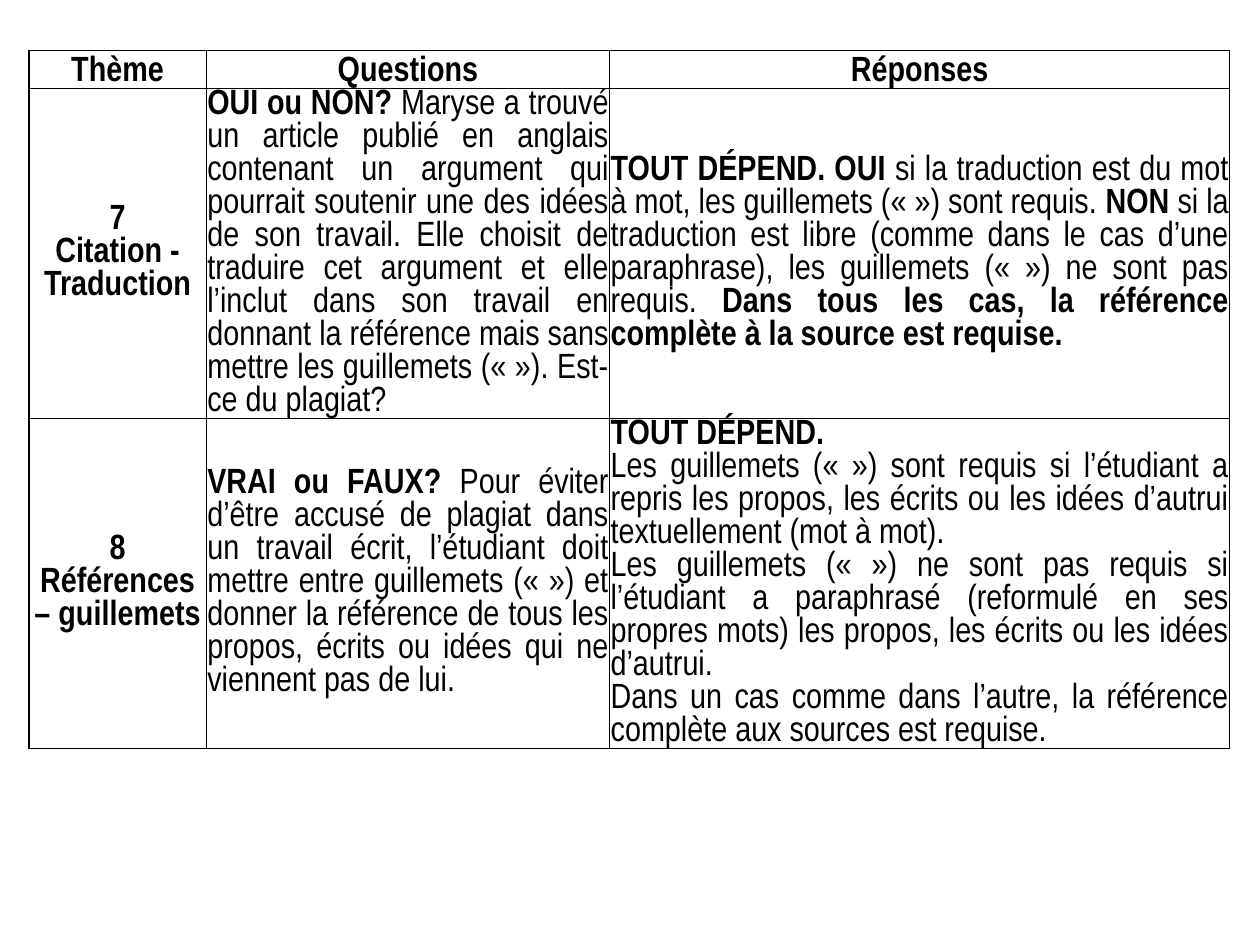
"""Build a slide with a question-and-answer table about quoting sources."""
from dataclasses import dataclass

from lxml.etree import SubElement
from pptx import Presentation
from pptx.dml.color import RGBColor
from pptx.enum.text import MSO_ANCHOR, PP_ALIGN
from pptx.oxml.ns import qn
from pptx.util import Cm, Pt


@dataclass(frozen=True)
class Theme:
    font: str = "Arial Narrow"
    size: Pt = Pt(20)
    ink: str = "000000"
    border: Pt = Pt(1)
    inset: Cm = Cm(0.02)
    head_spacing: float = 1.15


@dataclass(frozen=True)
class Run:
    text: str
    bold: bool = False


@dataclass(frozen=True)
class Entry:
    theme: list[str]
    question: list[list[Run]]
    answer: list[list[Run]]


THEME = Theme()
HEADINGS = ["Thème", "Questions", "Réponses"]
COL_WIDTHS = [Cm(3.58), Cm(8.13), Cm(12.5)]
ROW_HEIGHTS = [Cm(0.75), Cm(6.6), Cm(6.6)]
ENTRIES = [
    Entry(
        ["7", "Citation - Traduction"],
        [[
            Run("OUI ou NON? ", True),
            Run("Maryse a trouvé un article publié en anglais contenant un argument "
                "qui pourrait soutenir une des idées de son travail. Elle choisit de "
                "traduire cet argument et elle l’inclut dans son travail en donnant la "
                "référence mais sans mettre les guillemets (« »). Est-ce du plagiat?"),
        ]],
        [[
            Run("TOUT DÉPEND. OUI ", True),
            Run("si la traduction est du mot à mot, les guillemets (« ») sont requis. "),
            Run("NON ", True),
            Run("si la traduction est libre (comme dans le cas d’une paraphrase), "
                "les guillemets (« ») ne sont pas requis. "),
            Run("Dans tous les cas, la référence complète à la source est requise.", True),
        ]],
    ),
    Entry(
        ["8", "Références – guillemets"],
        [[
            Run("VRAI ou FAUX? ", True),
            Run("Pour éviter d’être accusé de plagiat dans un travail écrit, l’étudiant "
                "doit mettre entre guillemets (« ») et donner la référence de tous les "
                "propos, écrits ou idées qui ne viennent pas de lui."),
        ]],
        [
            [Run("TOUT DÉPEND.", True)],
            [Run("Les guillemets (« ») sont requis si l’étudiant a repris les propos, "
                 "les écrits ou les idées d’autrui textuellement (mot à mot).")],
            [Run("Les guillemets (« ») ne sont pas requis si l’étudiant a paraphrasé "
                 "(reformulé en ses propres mots) les propos, les écrits ou les idées "
                 "d’autrui.")],
            [Run("Dans un cas comme dans l’autre, la référence complète aux sources "
                 "est requise.")],
        ],
    ),
]


def bold_lines(lines: list[str]) -> list[list[Run]]:
    """Turn each line into a paragraph of one bold run."""
    return [[Run(line, True)] for line in lines]


def set_borders(cell) -> None:
    """Draw a thin line on all four sides of a cell."""
    tc_pr = cell._tc.get_or_add_tcPr()
    for side in ("lnL", "lnR", "lnT", "lnB"):
        ln = SubElement(tc_pr, qn(f"a:{side}"), w=str(THEME.border))
        fill = SubElement(ln, qn("a:solidFill"))
        SubElement(fill, qn("a:srgbClr"), val=THEME.ink)


def fill_cell(cell, paragraphs: list[list[Run]], *, align: PP_ALIGN,
              spacing: float | None = None) -> None:
    """Write formatted paragraphs into a bordered, unfilled cell."""
    set_borders(cell)
    cell.fill.background()
    cell.vertical_anchor = MSO_ANCHOR.MIDDLE
    cell.margin_left = cell.margin_right = THEME.inset
    cell.margin_top = cell.margin_bottom = 0
    tf = cell.text_frame
    for i, runs in enumerate(paragraphs):
        p = tf.add_paragraph() if i else tf.paragraphs[0]
        p.alignment = align
        p.line_spacing = spacing
        for run in runs:
            r = p.add_run()
            r.text = run.text
            r.font.name = THEME.font
            r.font.size = THEME.size
            r.font.bold = run.bold
            r.font.color.rgb = RGBColor.from_string(THEME.ink)


def add_quiz_table(s) -> None:
    """Add the table with its headings and entries."""
    frame = s.shapes.add_table(len(ROW_HEIGHTS), len(COL_WIDTHS), Cm(0.58), Cm(1.02),
                               sum(COL_WIDTHS), sum(ROW_HEIGHTS))
    table = frame.table
    table.first_row = table.horz_banding = False
    for col, width in zip(table.columns, COL_WIDTHS):
        col.width = width
    for row, height in zip(table.rows, ROW_HEIGHTS):
        row.height = height
    for c, heading in enumerate(HEADINGS):
        fill_cell(table.cell(0, c), bold_lines([heading]), align=PP_ALIGN.CENTER,
                  spacing=THEME.head_spacing)
    for i, entry in enumerate(ENTRIES, start=1):
        fill_cell(table.cell(i, 0), bold_lines(entry.theme), align=PP_ALIGN.CENTER)
        fill_cell(table.cell(i, 1), entry.question, align=PP_ALIGN.JUSTIFY)
        fill_cell(table.cell(i, 2), entry.answer, align=PP_ALIGN.JUSTIFY)


def main() -> None:
    """Create the presentation and save it."""
    prs = Presentation()
    prs.slide_width, prs.slide_height = Cm(25.4), Cm(19.05)
    s = prs.slides.add_slide(prs.slide_layouts[6])
    add_quiz_table(s)
    prs.save("out.pptx")


if __name__ == "__main__":
    main()
